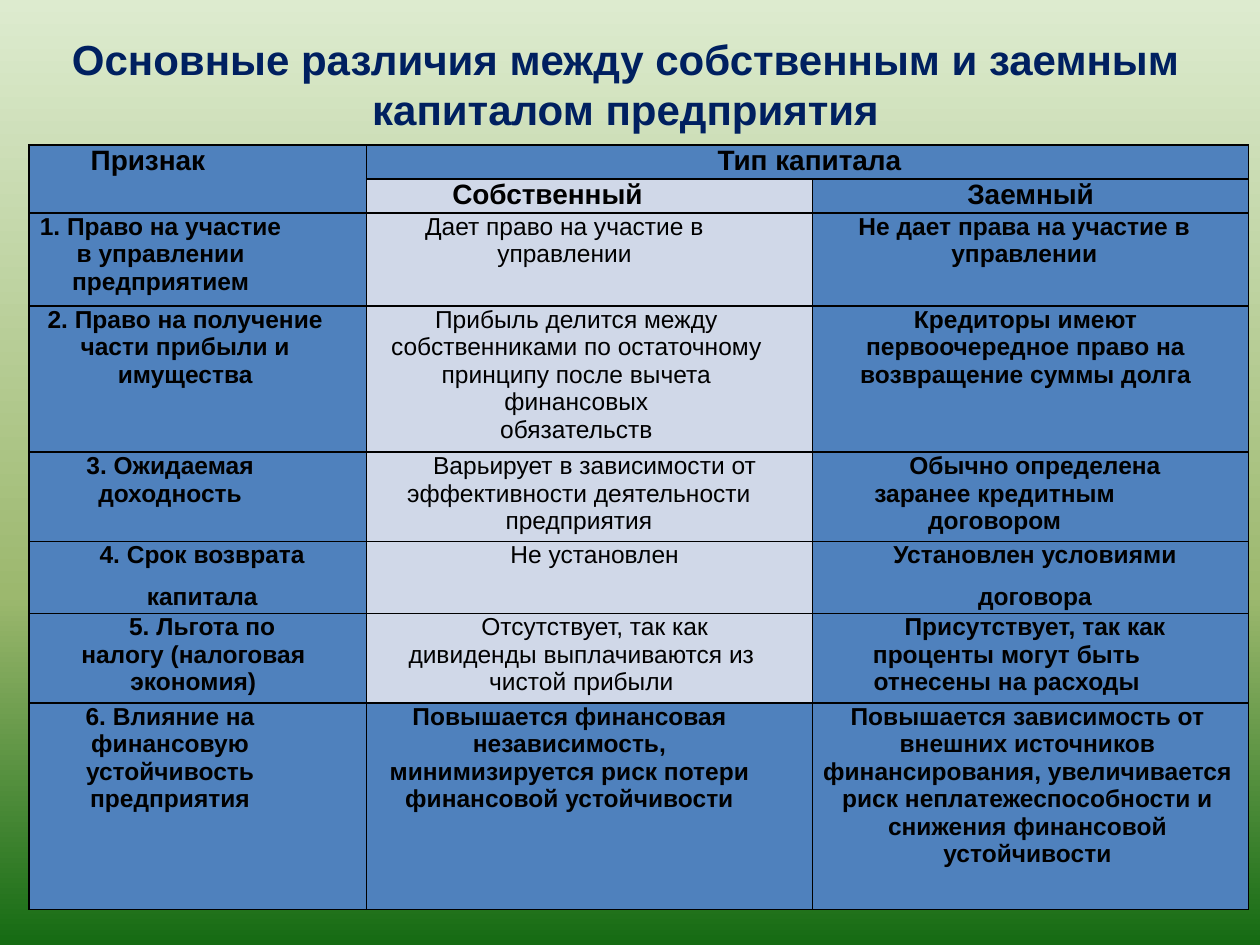
from pptx import Presentation, util as u
from pptx.dml.color import RGBColor
from pptx.enum import text as t
from pptx.oxml import parse_xml
from pptx.oxml.ns import nsdecls, qn
from copy import deepcopy

NAVY = RGBColor(0x00, 0x20, 0x60)
BLACK = RGBColor(0, 0, 0)
BLUE = RGBColor(0x4F, 0x81, 0xBD)
PALE = RGBColor(0xD0, 0xD8, 0xE8)
BACKDROP = [(0, RGBColor(0xDD, 0xEB, 0xCF)), (0.63, RGBColor(0x9C, 0xB8, 0x6E)),
            (1, RGBColor(0x15, 0x6B, 0x13))]

TITLE = "Основные различия между собственным и заемным капиталом предприятия"
COLUMN_WIDTHS = [2.68, 3.54, 3.46]
ROW_HEIGHTS = [0.27, 0.27, 0.74, 1.16, 0.71, 0.57, 0.71, 1.64]
LEFT_INDENTS = [0.07, 0.08, 0.07]

# (row, column): text, left indent, right indent, centred
HEADINGS = {
    (0, 0): ("Признак", 0.49, 0, False),
    (0, 1): ("Тип капитала", 1.82, 1.79, True),
    (1, 1): ("Собственный", 0.68, 0, False),
    (1, 2): ("Заемный", 0.76, 0.76, True),
}
# each paragraph: text, right indent, space before in points
FEATURES = [
    [[("1. Право на участие в управлении", 0.66, 0), ("предприятием", 0.66, 0)],
     [("Дает право на участие в управлении", 0.48, 0)],
     [("Не дает права на участие в управлении", 0.17, 0)]],
    [[("2. Право на получение части прибыли и имущества", 0.27, 0)],
     [("Прибыль делится между собственниками по остаточному принципу "
       "после вычета финансовых", 0.29, 0), ("обязательств", 0.29, 0)],
     [("Кредиторы имеют первоочередное право на возвращение суммы долга", 0.15, 0)]],
    [[("3. Ожидаемая доходность", 0.51, 0)],
     [("Варьирует в зависимости от", 0, 0),
      ("эффективности деятельности предприятия", 0.25, 0.2)],
     [("Обычно определена", 0, 0), ("заранее кредитным договором", 0.64, 0.2)]],
    [[("4. Срок возврата", 0, 0), ("капитала", 0, 8.1)],
     [("Не установлен", 0, 0)],
     [("Установлен условиями", 0, 0), ("договора", 0, 8.1)]],
    [[("5. Льгота по", 0, 0), ("налогу (налоговая экономия)", 0.14, 0.1)],
     [("Отсутствует, так как", 0, 0),
      ("дивиденды выплачиваются из чистой прибыли", 0.21, 0.1)],
     [("Присутствует, так как", 0, 0),
      ("проценты могут быть отнесены на расходы", 0.45, 0.1)]],
    [[("6. Влияние на финансовую устойчивость предприятия", 0.51, 0)],
     [("Повышается финансовая независимость, минимизируется риск потери "
       "финансовой устойчивости", 0.4, 0)],
     [("Повышается зависимость от внешних источников финансирования, увеличивается "
       "риск неплатежеспособности и снижения финансовой", 0.12, 0),
      ("устойчивости", 0.12, 0)]],
]


def write(paragraph, words, size=14, color=BLACK, bold=True, centred=True,
          left=0, right=0, before=0):
    paragraph.alignment = t.PP_ALIGN.CENTER if centred else t.PP_ALIGN.LEFT
    paragraph.space_before = u.Pt(before)
    indents = paragraph._p.get_or_add_pPr()
    indents.set("marL", str(u.Inches(left)))
    indents.set("marR", str(u.Inches(right)))
    indents.set("indent", "0")
    run = paragraph.add_run()
    run.text = words
    run.font.name = "Arial"
    run.font.size = u.Pt(size)
    run.font.bold = bold
    run.font.color.rgb = color


def paint_backdrop(slide):
    fill = slide.background.fill
    fill.gradient()
    fill.gradient_angle = 270
    stops = next(slide.element.iter(qn("a:gsLst")))
    stops.append(deepcopy(stops[0]))
    for stop, (position, color) in zip(fill.gradient_stops, BACKDROP):
        stop.position = position
        stop.color.rgb = color


def frame_cell(cell, color):
    cell.margin_left = cell.margin_right = cell.margin_top = cell.margin_bottom = 0
    properties = cell._tc.get_or_add_tcPr()
    for side in "LRTB":
        properties.append(parse_xml(
            f'<a:ln{side} {nsdecls("a")} w="{u.Pt(1)}"><a:solidFill>'
            f'<a:srgbClr val="{BLACK}"/></a:solidFill></a:ln{side}>'))
    cell.fill.solid()
    cell.fill.fore_color.rgb = color


def main():
    deck = Presentation()
    deck.slide_width, deck.slide_height = u.Inches(10), u.Inches(7.5)
    slide = deck.slides.add_slide(deck.slide_layouts[5])
    paint_backdrop(slide)

    title = slide.shapes.title
    title.left, title.top = u.Inches(0.2), u.Inches(0.21)
    title.width, title.height = u.Inches(9.53), u.Inches(0.91)
    title.text_frame.vertical_anchor = t.MSO_ANCHOR.MIDDLE
    write(title.text_frame.paragraphs[0], TITLE, size=24, color=NAVY)

    table = slide.shapes.add_table(
        len(ROW_HEIGHTS), len(COLUMN_WIDTHS), u.Inches(0.23), u.Inches(1.15),
        u.Inches(sum(COLUMN_WIDTHS)), u.Inches(sum(ROW_HEIGHTS))).table
    table.first_row = table.horz_banding = False
    for column, width in zip(table.columns, COLUMN_WIDTHS):
        column.width = u.Inches(width)
    for row, height in zip(table.rows, ROW_HEIGHTS):
        row.height = u.Inches(height)

    last = len(ROW_HEIGHTS) - 1
    for r in range(len(ROW_HEIGHTS)):
        for c in range(len(COLUMN_WIDTHS)):
            frame_cell(table.cell(r, c), PALE if c == 1 and 0 < r < last else BLUE)
    table.cell(0, 0).merge(table.cell(1, 0))
    table.cell(0, 1).merge(table.cell(0, 2))

    for (r, c), (words, left, right, centred) in HEADINGS.items():
        write(table.cell(r, c).text_frame.paragraphs[0], words, size=16,
              centred=centred, left=left, right=right)
    for r, feature in enumerate(FEATURES, start=2):
        for c, lines in enumerate(feature):
            frame = table.cell(r, c).text_frame
            for i, (words, right, before) in enumerate(lines):
                write(frame.add_paragraph() if i else frame.paragraphs[0], words,
                      bold=c != 1 or r == last, left=LEFT_INDENTS[c],
                      right=right, before=before)

    deck.save("out.pptx")


if __name__ == "__main__":
    main()
